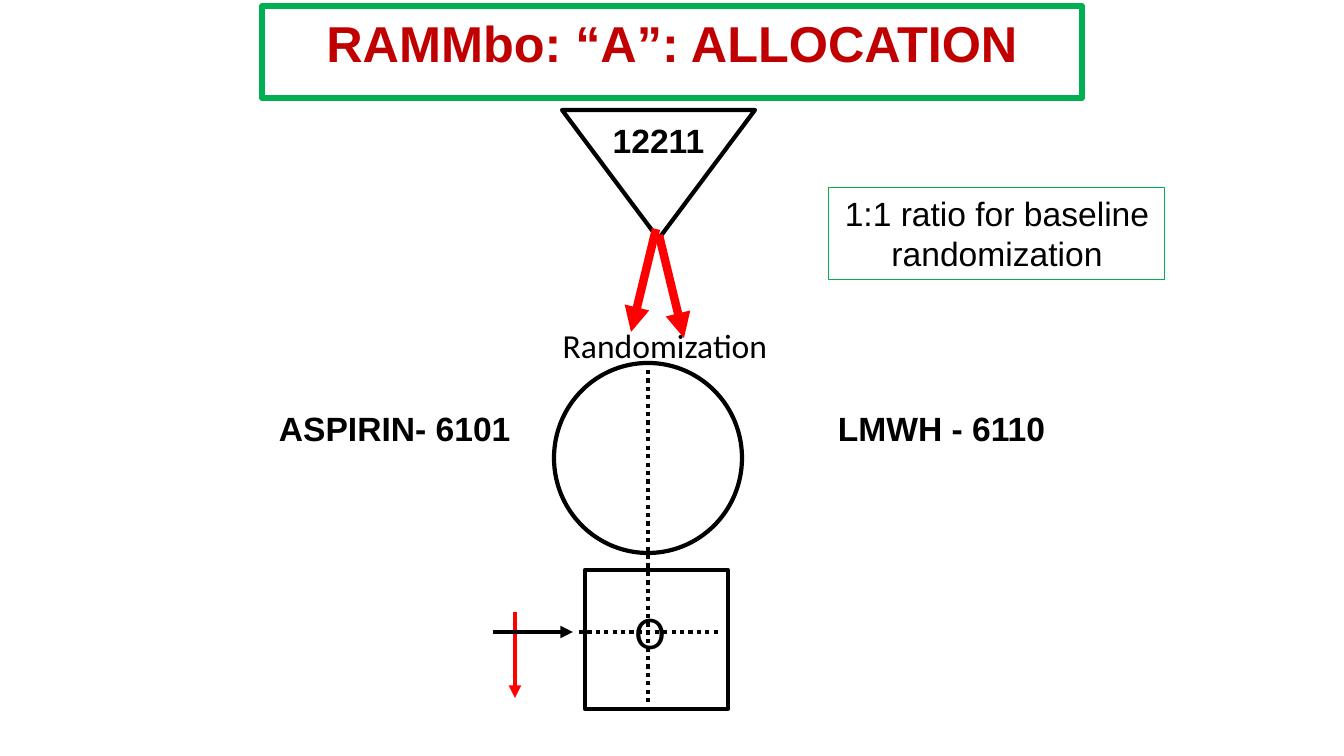
"""Builds the RAMMbo allocation slide with its trial flow diagram."""
from lxml.etree import SubElement
from pptx import Presentation
from pptx.dml.color import RGBColor
from pptx.enum.dml import MSO_LINE_DASH_STYLE as Dash
from pptx.enum.shapes import MSO_CONNECTOR as Connector, MSO_SHAPE as Shape
from pptx.enum.text import MSO_ANCHOR as Anchor, PP_ALIGN as Align
from pptx.oxml.ns import qn
from pptx.util import Emu, Pt

COLOURS = {"ink": "000000", "title": "C00000", "frame": "00B050", "arrow": "FF0000"}
EMU_PER_INCH, PX_PER_INCH = 914400, 100.8


def px(length):
    return Emu(round(length * EMU_PER_INCH / PX_PER_INCH))


def colour(name):
    return RGBColor.from_string(COLOURS[name])


class Diagram:
    def __init__(self, page):
        self.page = page

    def stroke(self, line, name, width):
        line.color.rgb = colour(name)
        line.width = Pt(width)

    def outline(self, kind, left, top, width, height, name="ink", weight=3):
        shape = self.page.shapes.add_shape(kind, px(left), px(top), px(width), px(height))
        shape.shadow.inherit = False
        shape.fill.background()
        self.stroke(shape.line, name, weight)
        return shape

    def set_text(self, shape, text, size=24, font="Arial", name="ink", bold=False,
                 align=Align.CENTER, wrap=True):
        frame = shape.text_frame
        frame.word_wrap = wrap
        frame.vertical_anchor = Anchor.TOP
        para = frame.paragraphs[0]
        para.text = text
        para.alignment = align
        para.font.size = Pt(size)
        para.font.name = font
        para.font.bold = bold
        para.font.color.rgb = colour(name)
        return para

    def label(self, left, top, width, height, text, **style):
        box = self.page.shapes.add_textbox(px(left), px(top), px(width), px(height))
        return self.set_text(box, text, **style)

    def line(self, start, end, name="ink", weight=3, dash=None, arrow=False):
        link = self.page.shapes.add_connector(
            Connector.STRAIGHT, *(px(value) for value in (*start, *end)))
        self.stroke(link.line, name, weight)
        if dash:
            link.line.dash_style = dash
        if arrow:
            SubElement(link.line._get_or_add_ln(), qn("a:tailEnd"), type="triangle")
        SubElement(link._element.spPr, qn("a:effectLst"))

    def tab_stop(self, para, position):
        stops = SubElement(para._p.get_or_add_pPr(), qn("a:tabLst"))
        para._p.pPr.insert(0, stops)
        SubElement(stops, qn("a:tab"), pos=str(px(position)), algn="l")


def main():
    deck = Presentation()
    deck.slide_width, deck.slide_height = px(1344), px(756)
    diagram = Diagram(deck.slides.add_slide(deck.slide_layouts[6]))

    title = diagram.outline(Shape.RECTANGLE, 262, 6, 820, 92, "frame", 4)
    heading = diagram.set_text(title, "RAMMbo: “A”: ALLOCATION", size=36, name="title", bold=True)
    heading.line_spacing = 0.9
    title.text_frame.margin_top = px(13)

    diagram.line((515, 612), (515, 698), "arrow", arrow=True)
    diagram.outline(Shape.OVAL, 554, 363, 188, 190)
    diagram.outline(Shape.RECTANGLE, 585, 570, 143, 139)
    diagram.line((648, 370), (648, 710), dash=Dash.ROUND_DOT)
    diagram.line((579, 632), (719, 632), dash=Dash.ROUND_DOT)
    diagram.line((493, 632), (573, 632), arrow=True)

    arms = diagram.label(269, 403, 972, 92, "ASPIRIN- 6101\tLMWH - 6110",
                         bold=True, align=Align.LEFT)
    diagram.tab_stop(arms, 559)
    diagram.label(624, 598, 52, 68, "O", size=33.4, font="Calibri", wrap=False)

    population = diagram.outline(Shape.ISOSCELES_TRIANGLE, 562, 110, 193, 129)
    population.rotation = 180
    diagram.label(592, 115, 133, 51, "12211", bold=True, wrap=False)

    diagram.line((656, 229), (631, 332), "arrow", 6, arrow=True)
    diagram.line((659, 235), (684, 338), "arrow", 6, arrow=True)
    diagram.label(199, 320, 932, 51, "Randomization", font="Calibri")

    ratio = diagram.outline(Shape.RECTANGLE, 829, 188, 336, 92, "frame", 0.75)
    diagram.set_text(ratio, "1:1 ratio for baseline randomization")
    deck.save("out.pptx")


if __name__ == "__main__":
    main()
